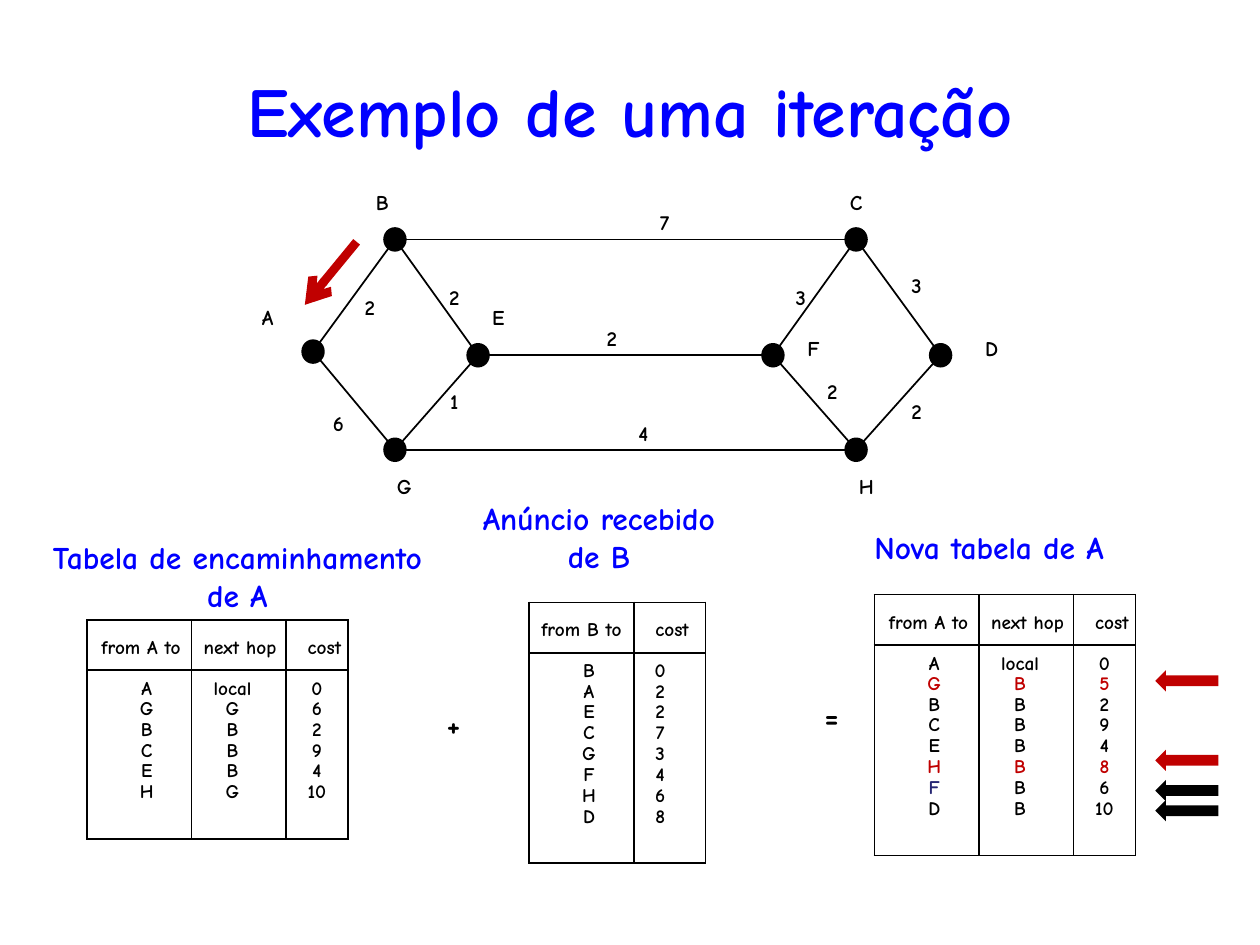
"""Build a slide that shows one step of distance vector routing."""
from dataclasses import dataclass

from lxml import etree
from pptx import Presentation
from pptx.dml.color import RGBColor
from pptx.enum import shapes, text
from pptx.oxml import ns
from pptx.util import Pt


@dataclass(frozen=True)
class Theme:
    font: str = "Comic Neue"
    ink: str = "000000"
    blue: str = "0000FF"
    red: str = "C00000"
    navy: str = "262673"
    title: float = 40
    head: float = 18
    label: float = 12
    cell: float = 11
    line: float = 1
    bold: float = 5


T = Theme()


@dataclass(frozen=True)
class Node:
    name: str
    x: float
    y: float
    tx: float
    ty: float


@dataclass(frozen=True)
class Edge:
    ends: str
    cost: str
    tx: float
    ty: float


@dataclass(frozen=True)
class Row:
    cells: str
    first: str = T.ink
    rest: str = T.ink


@dataclass(frozen=True)
class Col:
    head: str
    width: float
    shift: float
    nudge: float


@dataclass(frozen=True)
class Grid:
    title: str
    box: tuple[float, float, float, float]
    x: float
    y: float
    high: float
    cols: list[Col]
    rows: list[Row]


@dataclass(frozen=True)
class Arrow:
    y: float
    color: str


NODES = [
    Node("A", 178.9, 200.9, 153, 182.5),
    Node("B", 225.7, 136.8, 218.5, 117),
    Node("C", 489.2, 136.8, 489.2, 117),
    Node("D", 537.5, 203, 566.6, 200.5),
    Node("E", 273.2, 203, 284.8, 182.5),
    Node("F", 441.7, 203, 464.8, 200.5),
    Node("G", 225.7, 257, 231.1, 279),
    Node("H", 489.2, 257, 495, 279),
]
EDGES = [
    Edge("BA", "2", 211.3, 176.8),
    Edge("BE", "2", 259.6, 171),
    Edge("EG", "1", 259.6, 230.8),
    Edge("AG", "6", 193.3, 243),
    Edge("CF", "3", 457.6, 171),
    Edge("CD", "3", 523.8, 164.5),
    Edge("DH", "2", 523.8, 236.5),
    Edge("FH", "2", 475.6, 225),
    Edge("EF", "2", 349.6, 194.8),
    Edge("BC", "7", 379.8, 128.5),
    Edge("GH", "4", 367.6, 248.8),
]
FROM_A = [
    Col("from A to", 59.8, 4.3, 1),
    Col("next hop", 54, -3.6, 0.7),
    Col("cost", 35.3, 0, 4.3),
]
FROM_B = [Col("from B to", 59.8, 4.3, 0), Col("cost", 41, -5.4, 1.4)]
GRIDS = [
    Grid("Tabela de encaminhamento de A", (14.4, 303.8, 242.6, 51.1), 49.7, 354.2, 125.3, FROM_A,
         [Row(r) for r in ("A local 0", "G G 6", "B B 2", "C B 9", "E B 4", "H G 10")]),
    Grid("Anúncio recebido\nde B", (257, 281.5, 170.6, 51.1), 302.4, 344.2, 149, FROM_B,
         [Row(r) for r in ("B 0", "A 2", "E 2", "C 7", "G 3", "F 4", "H 6", "D 8")]),
    Grid("Nova tabela de A", (490.2, 298.1, 150, 28.8), 499.7, 339.8, 149, FROM_A,
         [Row("A local 0"), Row("G B 5", T.red, T.red), Row("B B 2"), Row("C B 9"),
          Row("E B 4"), Row("H B 8", T.red, T.red), Row("F B 6", T.navy), Row("D B 10")]),
]
ARROWS = [Arrow(383, T.red), Arrow(428.4, T.red), Arrow(445.7, T.ink), Arrow(457.2, T.ink)]
HEAD, STEP, GAP = 28.8, 11.9, 4.8


def write(frame, words: str, size: float, color: str, space: float = 1) -> None:
    """Fill a text frame with centred bold text."""
    frame.text = words
    for para in frame.paragraphs:
        para.alignment = text.PP_ALIGN.CENTER
        para.line_spacing = space
        font = para.font
        font.name, font.size, font.bold = T.font, Pt(size), True
        font.color.rgb = RGBColor.from_string(color)


def label(slide, words: str, x: float, y: float, size: float) -> None:
    """Write a short text centred on a point."""
    high = size * 1.08 + 8
    box = slide.shapes.add_textbox(Pt(x - 12), Pt(y - high / 2), Pt(24), Pt(high))
    box.text_frame.word_wrap = False
    write(box.text_frame, words, size, T.ink, 0.9)


def link(slide, a: tuple, b: tuple, color: str, width: float):
    """Draw a straight line between two points."""
    line = slide.shapes.add_connector(shapes.MSO_CONNECTOR.STRAIGHT, *map(Pt, a + b))
    line.line.color.rgb = RGBColor.from_string(color)
    line.line.width = Pt(width)
    etree.SubElement(line._element.spPr, ns.qn("a:effectLst"))
    return line


def solid(slide, kind, box: tuple, color: str):
    """Draw a filled shape without an outline."""
    shape = slide.shapes.add_shape(kind, *map(Pt, box))
    shape.shadow.inherit = False
    shape.fill.solid()
    shape.fill.fore_color.rgb = RGBColor.from_string(color)
    shape.line.fill.background()
    return shape


def edge(cell, sides: str) -> None:
    """Rule the named sides of a cell and clear the others."""
    props = cell._tc.get_or_add_tcPr()
    for side in "LRTB":
        line = etree.SubElement(props, ns.qn(f"a:ln{side}"), w=str(Pt(T.line)))
        if side in sides:
            fill = etree.SubElement(line, ns.qn("a:solidFill"))
            etree.SubElement(fill, ns.qn("a:srgbClr"), val=T.ink)
        else:
            etree.SubElement(line, ns.qn("a:noFill"))
    cell.fill.background()


def put(cell, words: str, color: str, shift: float, sides: str) -> None:
    """Write a table cell, moved sideways from its centre."""
    cell.margin_top = cell.margin_bottom = 0
    cell.margin_left, cell.margin_right = Pt(max(2 * shift, 0)), Pt(max(-2 * shift, 0))
    write(cell.text_frame, words, T.cell, color, 0.9)
    edge(cell, sides)


def grid(slide, g: Grid) -> None:
    """Draw a routing table with its caption."""
    box = slide.shapes.add_textbox(*map(Pt, g.box))
    box.text_frame.word_wrap = True
    write(box.text_frame, g.title, T.head, T.blue)
    count = len(g.rows)
    wide = sum(c.width for c in g.cols)
    table = slide.shapes.add_table(count + 1, len(g.cols), Pt(g.x), Pt(g.y), Pt(wide), Pt(g.high)).table
    table.first_row = table.horz_banding = False
    highs = [HEAD, STEP + GAP] + [STEP] * (count - 2)
    for row, high in zip(table.rows, highs + [g.high - sum(highs)]):
        row.height = Pt(high)
    for j, col in enumerate(g.cols):
        table.columns[j].width = Pt(col.width)
        top = table.cell(0, j)
        put(top, col.head, T.ink, col.nudge, "LRTB")
        top.margin_top = Pt(3.6)
        top.vertical_anchor = text.MSO_ANCHOR.MIDDLE
        for i, row in enumerate(g.rows, 1):
            cell = table.cell(i, j)
            sides = "LR" + "T" * (i == 1) + "B" * (i == count)
            put(cell, row.cells.split()[j], row.rest if j else row.first, col.shift, sides)
            cell.vertical_anchor = text.MSO_ANCHOR.BOTTOM if i == 1 else text.MSO_ANCHOR.TOP


def main() -> None:
    """Build and save the slide."""
    deck = Presentation()
    deck.slide_width, deck.slide_height = Pt(720), Pt(540)
    slide = deck.slides.add_slide(deck.slide_layouts[5])
    title = slide.shapes.title
    title.left, title.top, title.width, title.height = map(Pt, (36, 17.3, 648, 90))
    title.text_frame.vertical_anchor = text.MSO_ANCHOR.MIDDLE
    write(title.text_frame, "Exemplo de uma iteração", T.title, T.blue)
    spots = {n.name: (n.x, n.y) for n in NODES}
    for e in EDGES:
        link(slide, *(spots[k] for k in e.ends), T.ink, T.line)
        label(slide, e.cost, e.tx, e.ty, T.label)
    for n in NODES:
        dot = solid(slide, shapes.MSO_SHAPE.OVAL, (n.x - 6.2, n.y - 6.5, 12.4, 13), T.ink)
        dot.line.color.rgb = RGBColor.from_string(T.ink)
        dot.line.width = Pt(T.line)
        label(slide, n.name, n.tx, n.ty, T.label)
    for g in GRIDS:
        grid(slide, g)
    label(slide, "+", 259.2, 415.4, T.head)
    label(slide, "=", 475.2, 411.1, T.head)
    for a in ARROWS:
        solid(slide, shapes.MSO_SHAPE.LEFT_ARROW, (660.2, a.y, 36, 12.2), a.color)
    sent = link(slide, (203.8, 138.2), (174.2, 174.2), T.red, T.bold)
    etree.SubElement(sent.line._get_or_add_ln(), ns.qn("a:tailEnd"), type="arrow")
    deck.save("out.pptx")


if __name__ == "__main__":
    main()
